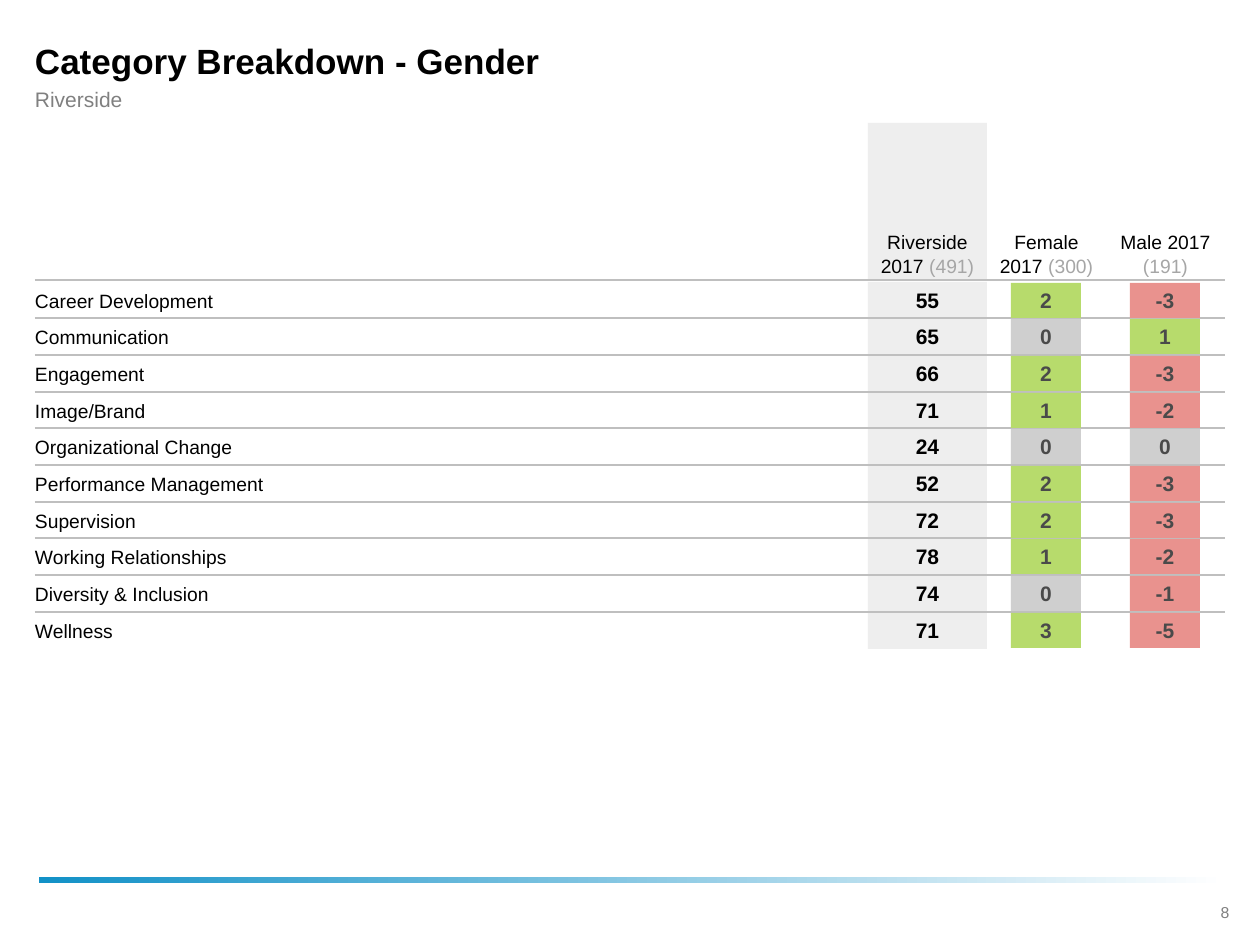
from lxml.etree import SubElement
from pptx import Presentation
from pptx.dml.color import RGBColor
from pptx.enum.shapes import MSO_CONNECTOR, MSO_SHAPE
from pptx.enum.text import MSO_ANCHOR, MSO_AUTO_SIZE, PP_ALIGN
from pptx.oxml.ns import qn
from pptx.util import Pt

PX = 914400 // 126
COLORS = {
    "black": "000000", "title_gray": "808080", "page_gray": "7F7F7F",
    "count": "A6A6A6", "rule": "BFBFBF", "column": "EEEEEE",
    "up": "B7DB6C", "down": "E9928E", "same": "CFCFCF",
    "score": "4A4A4A", "bar": "1291C7", "white": "FFFFFF",
}
RGB = {name: RGBColor.from_string(value) for name, value in COLORS.items()}

LEFT, RIGHT = 35, 1225
COL_X, COL_W = 868, 119
HEAD_Y, HEAD_H, HEAD_RULE = 123, 158, 280
ROW_Y, ROW_H = 282, 37
CHIP_W, CHIP_H = 70, 35

HEADS = [("Riverside 2017 ", "(491)"), ("Female 2017 ", "(300)"), ("Male 2017 ", "(191)")]
ROWS = [
    ("Career Development", 55, 2, -3),
    ("Communication", 65, 0, 1),
    ("Engagement", 66, 2, -3),
    ("Image/Brand", 71, 1, -2),
    ("Organizational Change", 24, 0, 0),
    ("Performance Management", 52, 2, -3),
    ("Supervision", 72, 2, -3),
    ("Working Relationships", 78, 1, -2),
    ("Diversity & Inclusion", 74, 0, -1),
    ("Wellness", 71, 3, -5),
]
row_tops = [ROW_Y + i * 110 // 3 for i in range(len(ROWS))]

prs = Presentation()
prs.slide_width, prs.slide_height = 1260 * PX, 945 * PX
s = prs.slides.add_slide(prs.slide_layouts[6])


def add_box(x, y, w, h, fill=None):
    box = [v * PX for v in (x, y, w, h)]
    if fill is None:
        return s.shapes.add_textbox(*box)
    sp = s.shapes.add_shape(MSO_SHAPE.RECTANGLE, *box)
    sp.shadow.inherit = False
    sp.line.fill.background()
    sp.fill.solid()
    sp.fill.fore_color.rgb = RGB[fill]
    return sp


def write(sp, text, size, color, bold=False, align=PP_ALIGN.LEFT,
          anchor=MSO_ANCHOR.MIDDLE, insets=(0, 0, 0, 0), wrap=True):
    tf = sp.text_frame
    tf.word_wrap = wrap
    tf.vertical_anchor = anchor
    tf.margin_left, tf.margin_top, tf.margin_right, tf.margin_bottom = [v * PX for v in insets]
    p = tf.paragraphs[0]
    p.alignment = align
    p.font.name, p.font.size, p.font.bold = "Arial", Pt(size), bold
    p.font.color.rgb = RGB[color]
    p.add_run().text = text
    return p


bar = add_box(39, 877, 1187, 6, "bar")
bar.fill.gradient()
bar.fill.gradient_angle = 0
for stop, position, color in zip(bar.fill.gradient_stops, (0, 1), ("bar", "white")):
    stop.position = position
    stop.color.rgb = RGB[color]

page = add_box(1192, 897, 66, 31)
write(page, "8", 9, "page_gray", align=PP_ALIGN.CENTER, anchor=MSO_ANCHOR.TOP,
      insets=(13, 6, 13, 6))
page.text_frame.auto_size = MSO_AUTO_SIZE.SHAPE_TO_FIT_TEXT

write(add_box(LEFT, 36, 1190, 48), "Category Breakdown - Gender", 20, "black",
      bold=True, insets=(0, 0, 44, 0))
write(add_box(LEFT, 86, 1190, 27), "Riverside", 12, "title_gray", insets=(0, 0, 44, 0))

add_box(COL_X, HEAD_Y, COL_W, HEAD_H, "column")
for y in row_tops:
    add_box(COL_X, y, COL_W, ROW_H, "column")

rules = [(HEAD_RULE, 1.5)] + [(y, 0.75) for y in row_tops[1:]]
for y, weight in rules:
    ln = s.shapes.add_connector(MSO_CONNECTOR.STRAIGHT, LEFT * PX, y * PX, RIGHT * PX, y * PX)
    ln.line.color.rgb = RGB["rule"]
    ln.line.width = Pt(weight)
    SubElement(ln._element.spPr, qn("a:effectLst"))

for col, (label, count) in enumerate(HEADS):
    p = write(add_box(COL_X + col * COL_W, HEAD_Y, COL_W, HEAD_H), label, 11, "black",
              align=PP_ALIGN.CENTER, anchor=MSO_ANCHOR.BOTTOM, insets=(4, 4, 4, 4))
    r = p.add_run()
    r.text = count
    r.font.color.rgb = RGB["count"]

for y, (category, total, *gaps) in zip(row_tops, ROWS):
    write(add_box(LEFT, y + 4, 833, 29), category, 11, "black")
    write(add_box(COL_X, y, COL_W, ROW_H), str(total), 12, "black", bold=True,
          align=PP_ALIGN.CENTER, insets=(4, 4, 4, 4))
    for col, gap in enumerate(gaps, 1):
        fill = "up" if gap > 0 else "down" if gap < 0 else "same"
        x = COL_X + col * COL_W + (COL_W - CHIP_W) // 2
        write(add_box(x, y + 1, CHIP_W, CHIP_H, fill), str(gap), 12, "score", bold=True,
              align=PP_ALIGN.CENTER, insets=(0, 6, 0, 6), wrap=False)

prs.save("out.pptx")
